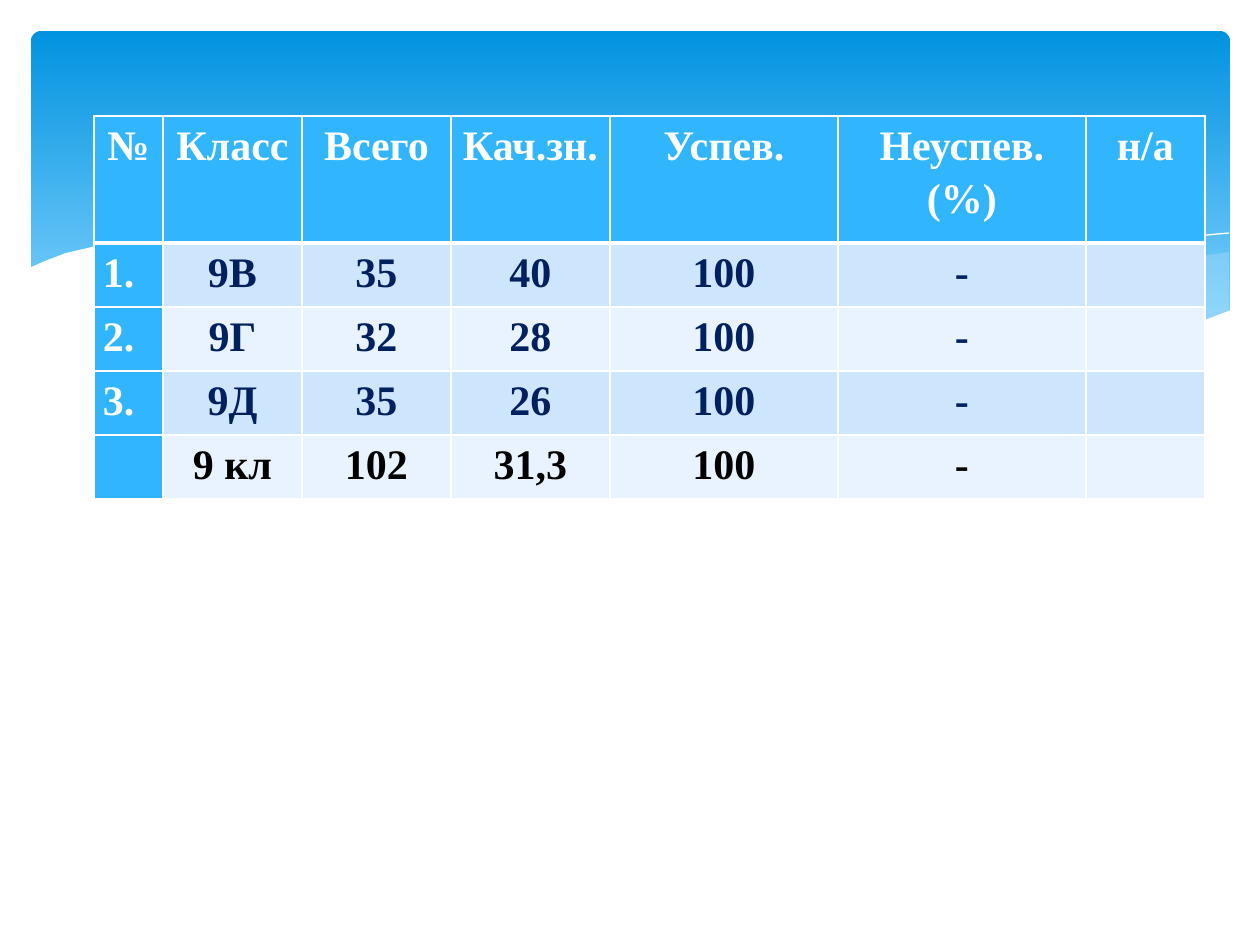
from lxml.etree import SubElement
from pptx import Presentation
from pptx.dml.color import RGBColor
from pptx.enum.shapes import MSO_SHAPE as Preset
from pptx.enum.text import PP_ALIGN as Align
from pptx.oxml.ns import qn
from pptx.util import Pt

HEADER = ["№", "Класс", "Всего", "Кач.зн.", "Успев.", "Неуспев.\n(%)", "н/а"]
ROWS = [
    ["1.", "9В", "35", "40", "100", "-", ""],
    ["2.", "9Г", "32", "28", "100", "-", ""],
    ["3.", "9Д", "35", "26", "100", "-", ""],
    ["", "9 кл", "102", "31,3", "100", "-", ""],
]
COLUMN_WIDTHS = [69, 139, 149, 159, 228, 248, 119]
ROW_HEIGHTS = [127, 64, 64, 64, 64]
TABLE_LEFT, TABLE_TOP = 94, 116

WHITE, ACCENT, NAVY, BLACK = "FFFFFF", "31B6FD", "002060", "000000"
BANDS = ["E8F3FF", "CEE5FE"]
FONT = {"name": "Times New Roman", "size": Pt(24), "bold": True}

RIGHT_WAVE = [
    (1229, 252), (1194, 257), (1160, 265), (1123, 272), (1085, 281), (1014, 299),
    (949, 312), (890, 324), (833, 334), (871, 339), (922, 345), (984, 349),
    (1052, 349), (1110, 344), (1150, 336), (1187, 326), (1229, 311),
]
MIDDLE_WAVE = [
    (1125, 344), (1055, 334), (977, 320), (890, 302), (793, 280), (736, 266),
    (682, 256), (616, 244), (557, 238), (479, 233), (413, 236), (360, 241),
    (431, 251), (509, 266), (566, 280), (668, 302), (757, 321), (838, 335),
    (910, 345), (974, 349), (1031, 350), (1080, 349),
]
FALLING_LINE = [
    (389, 246), (433, 239), (488, 236), (546, 236), (616, 239), (701, 248),
    (801, 262), (916, 285), (1047, 316), (1143, 343),
]
RISING_LINE = [(772, 324), (876, 296), (978, 272), (1091, 251), (1164, 239), (1229, 233)]
WHITE_WAVE = [
    (1231, 310), (1197, 323), (1159, 334), (1118, 341), (1071, 346), (1019, 349),
    (959, 346), (892, 340), (816, 330), (730, 315), (634, 294), (563, 277),
    (493, 261), (428, 248), (368, 239), (315, 234), (243, 232), (184, 233),
    (134, 238), (96, 246), (66, 253), (45, 261), (29, 268), (29, 415), (1231, 415),
]
CURVES = [
    (RIGHT_WAVE, "C6E7FC", 29),
    (MIDDLE_WAVE, "C6E7FC", 40),
    (FALLING_LINE, None, 100),
    (RISING_LINE, None, 100),
    (WHITE_WAVE, WHITE, 100),
]


def px(value):
    return round(value * 914400 / 126)


def color(value):
    return RGBColor.from_string(value)


def assign(target, values):
    for name, value in values.items():
        setattr(target, name, value)


def add_banner(page):
    banner = page.shapes.add_shape(Preset.ROUNDED_RECTANGLE, px(31), px(31), px(1199), px(340))
    banner.adjustments[0] = 0.03
    banner.shadow.inherit = False
    banner.line.fill.background()
    banner.fill.gradient()
    banner.fill.gradient_angle = 270
    for stop, position, tone in zip(banner.fill.gradient_stops, (0, 0.9), ("0293E0", "83D3FE")):
        assign(stop, {"position": position})
        stop.color.rgb = color(tone)


def add_curve(page, points, tone, opacity):
    points = [(px(x), px(y)) for x, y in points]
    builder = page.shapes.build_freeform(*points[0])
    builder.add_line_segments(points[1:], close=tone is not None)
    curve = builder.convert_to_shape()
    curve.shadow.inherit = False
    if tone is None:
        curve.fill.background()
        curve.line.width = 0
        curve.line.color.rgb = color(WHITE)
        return
    curve.line.fill.background()
    curve.fill.solid()
    curve.fill.fore_color.rgb = color(tone)
    if opacity < 100:
        tint = curve.fill._xPr.find(".//" + qn("a:srgbClr"))
        SubElement(tint, qn("a:alpha"), val=str(opacity * 1000))


def set_borders(cell, widths):
    properties = cell._tc.get_or_add_tcPr()
    for index, (side, width) in enumerate(widths.items()):
        border = SubElement(properties, qn("a:" + side), w=str(Pt(width)))
        fill = SubElement(border, qn("a:solidFill"))
        SubElement(fill, qn("a:srgbClr"), val=WHITE)
        properties.insert(index, border)


def fill_cell(cell, text, row, column):
    assign(cell, {"margin_left": px(9), "margin_right": px(9), "margin_top": 0, "margin_bottom": 0})
    heading = row == 0 or column == 0
    cell.fill.solid()
    cell.fill.fore_color.rgb = color(ACCENT if heading else BANDS[row % 2])
    set_borders(cell, {
        "lnL": 1, "lnR": 1, "lnT": 3 if row == 1 else 1, "lnB": 3 if row == 0 else 1,
    })
    cell.text = text
    ink = WHITE if heading else BLACK if row == len(ROWS) else NAVY
    for para in cell.text_frame.paragraphs:
        para.alignment = Align.LEFT if column == 0 and row else Align.CENTER
        para.line_spacing = 1.15
        for font in [para.font] + [span.font for span in para.runs]:
            assign(font, FONT)
            font.color.rgb = color(ink)


def add_results(page):
    content = [HEADER] + ROWS
    table = page.shapes.add_table(
        len(content), len(HEADER), px(TABLE_LEFT), px(TABLE_TOP),
        px(sum(COLUMN_WIDTHS)), px(sum(ROW_HEIGHTS)),
    ).table
    for column, width in zip(table.columns, COLUMN_WIDTHS):
        column.width = px(width)
    for row, height in zip(table.rows, ROW_HEIGHTS):
        row.height = px(height)
    for row, texts in enumerate(content):
        for column, text in enumerate(texts):
            fill_cell(table.cell(row, column), text, row, column)


def main():
    deck = Presentation()
    assign(deck, {"slide_width": px(1260), "slide_height": px(945)})
    page = deck.slides.add_slide(deck.slide_layouts[6])
    add_banner(page)
    for points, tone, opacity in CURVES:
        add_curve(page, points, tone, opacity)
    add_results(page)
    deck.save("out.pptx")


if __name__ == "__main__":
    main()
